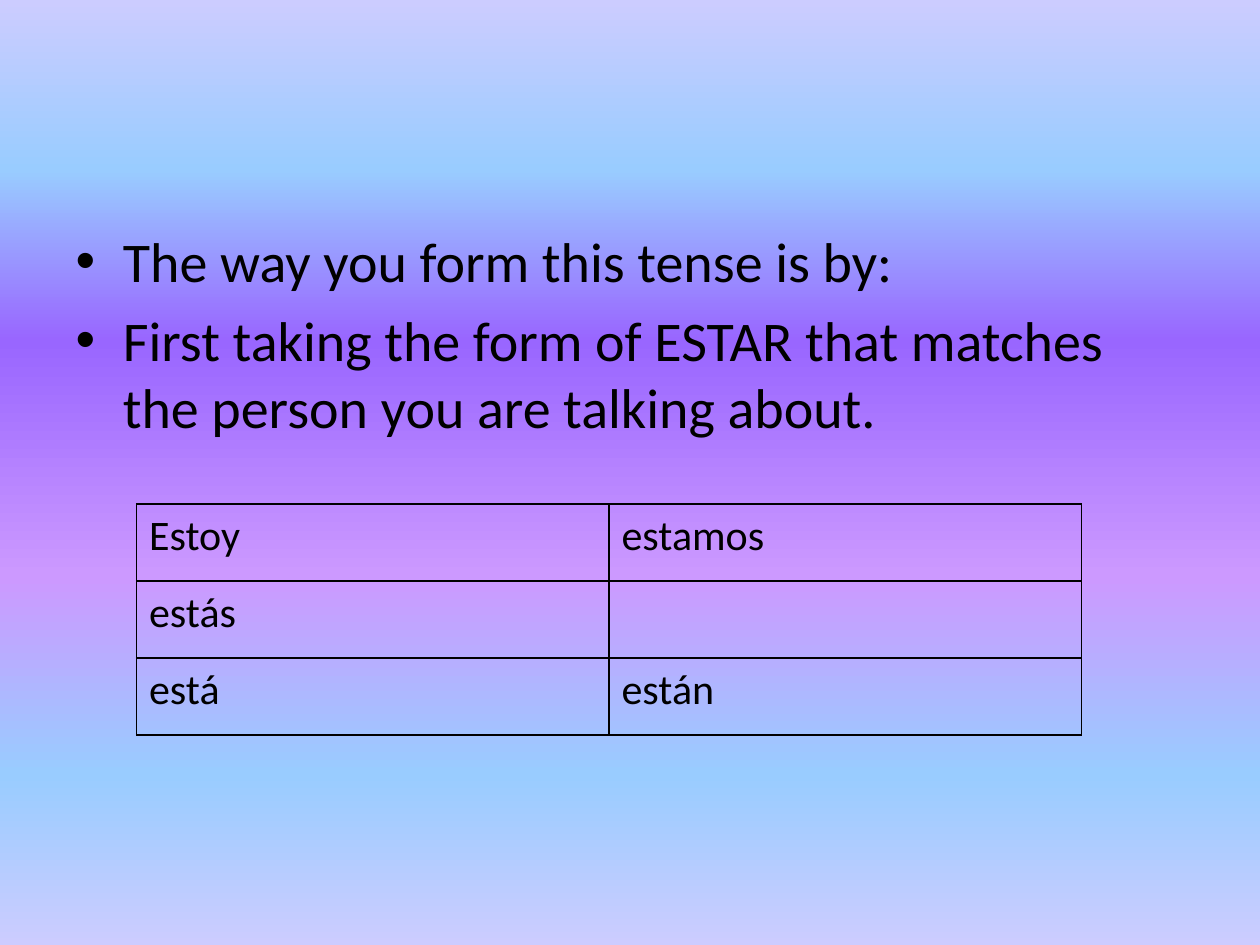
from typing import NamedTuple

from lxml.etree import SubElement
from pptx import Presentation
from pptx.dml.color import RGBColor
from pptx.oxml.ns import qn
from pptx.slide import Slide
from pptx.table import _Cell
from pptx.text.text import _Paragraph
from pptx.util import Pt

BLACK = RGBColor(0x00, 0x00, 0x00)
LAVENDER = RGBColor(0xCC, 0xCC, 0xFF)
SKY = RGBColor(0x99, 0xCC, 0xFF)
VIOLET = RGBColor(0x99, 0x66, 0xFF)
ORCHID = RGBColor(0xCC, 0x99, 0xFF)

BULLETS = (
    "The way you form this tense is by:",
    "First taking the form of ESTAR that matches the person you are talking about.",
)
ESTAR_FORMS = (("Estoy", "estamos"), ("estás", ""), ("está", "están"))


class GradientStop(NamedTuple):
    percent: int
    color: RGBColor


class Box(NamedTuple):
    left: Pt
    top: Pt
    width: Pt
    height: Pt


BACKGROUND_STOPS = (
    GradientStop(0, LAVENDER),
    GradientStop(18, SKY),
    GradientStop(36, VIOLET),
    GradientStop(61, ORCHID),
    GradientStop(82, SKY),
    GradientStop(100, LAVENDER),
)
BODY_BOX = Box(Pt(36), Pt(126), Pt(648), Pt(356.4))
TABLE_BOX = Box(Pt(78), Pt(288), Pt(540), Pt(132))


def paint_background(slide: Slide, stops: tuple[GradientStop, ...]) -> None:
    fill = slide.background.fill
    fill.gradient()
    gradient = slide.background._cSld.find(".//" + qn("a:gradFill"))
    stop_list = gradient.find(qn("a:gsLst"))
    for default_stop in list(stop_list):
        stop_list.remove(default_stop)
    for stop in stops:
        element = SubElement(stop_list, qn("a:gs"), pos=str(stop.percent * 1000))
        SubElement(element, qn("a:srgbClr"), val=str(stop.color))
    fill.gradient_angle = 270


def format_paragraph(paragraph: _Paragraph, size: int) -> None:
    for name, value in {"name": "Calibri", "size": Pt(size)}.items():
        setattr(paragraph.font, name, value)
    paragraph.font.color.rgb = BLACK


def add_body(slide: Slide, box: Box, lines: tuple[str, ...]) -> None:
    body = slide.placeholders[1]
    for name, value in box._asdict().items():
        setattr(body, name, value)
    body.text_frame.text = "\n".join(lines)
    for paragraph in body.text_frame.paragraphs:
        format_paragraph(paragraph, 32)


def outline_cell(cell: _Cell) -> None:
    properties = cell._tc.get_or_add_tcPr()
    for position, side in enumerate(("lnL", "lnR", "lnT", "lnB")):
        line = properties.makeelement(qn(f"a:{side}"), {"w": str(Pt(1))})
        fill = SubElement(line, qn("a:solidFill"))
        SubElement(fill, qn("a:srgbClr"), val=str(BLACK))
        properties.insert(position, line)


def add_forms_table(slide: Slide, box: Box, forms: tuple[tuple[str, ...], ...]) -> None:
    table = slide.shapes.add_table(len(forms), len(forms[0]), *box).table
    for name in ("first_row", "horz_banding"):
        setattr(table, name, False)
    for row_index, row in enumerate(forms):
        for column_index, form in enumerate(row):
            cell = table.cell(row_index, column_index)
            cell.text = form
            format_paragraph(cell.text_frame.paragraphs[0], 24)
            cell.fill.background()
            outline_cell(cell)


def main() -> None:
    presentation = Presentation()
    presentation.slide_width, presentation.slide_height = Pt(720), Pt(540)
    slide = presentation.slides.add_slide(presentation.slide_layouts[1])
    title = slide.shapes.title.element
    title.getparent().remove(title)
    paint_background(slide, BACKGROUND_STOPS)
    add_body(slide, BODY_BOX, BULLETS)
    add_forms_table(slide, TABLE_BOX, ESTAR_FORMS)
    presentation.save("out.pptx")


if __name__ == "__main__":
    main()
